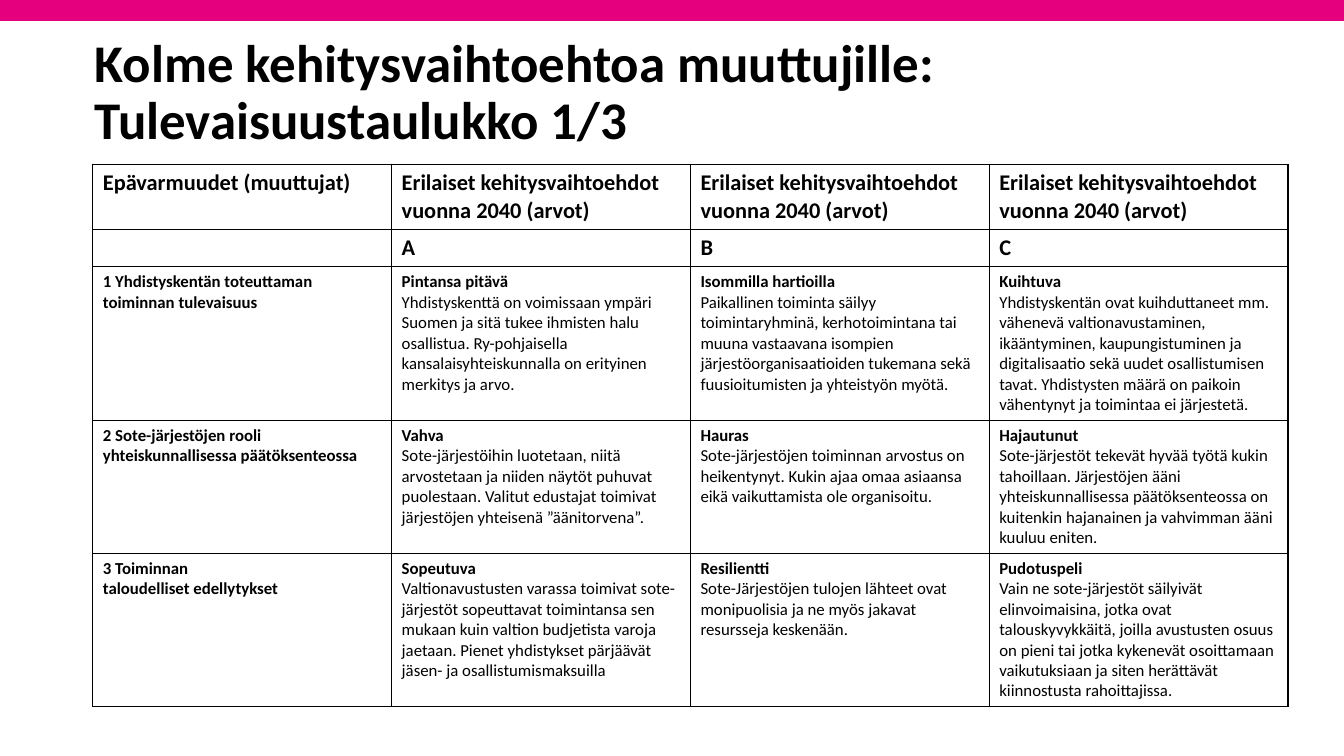
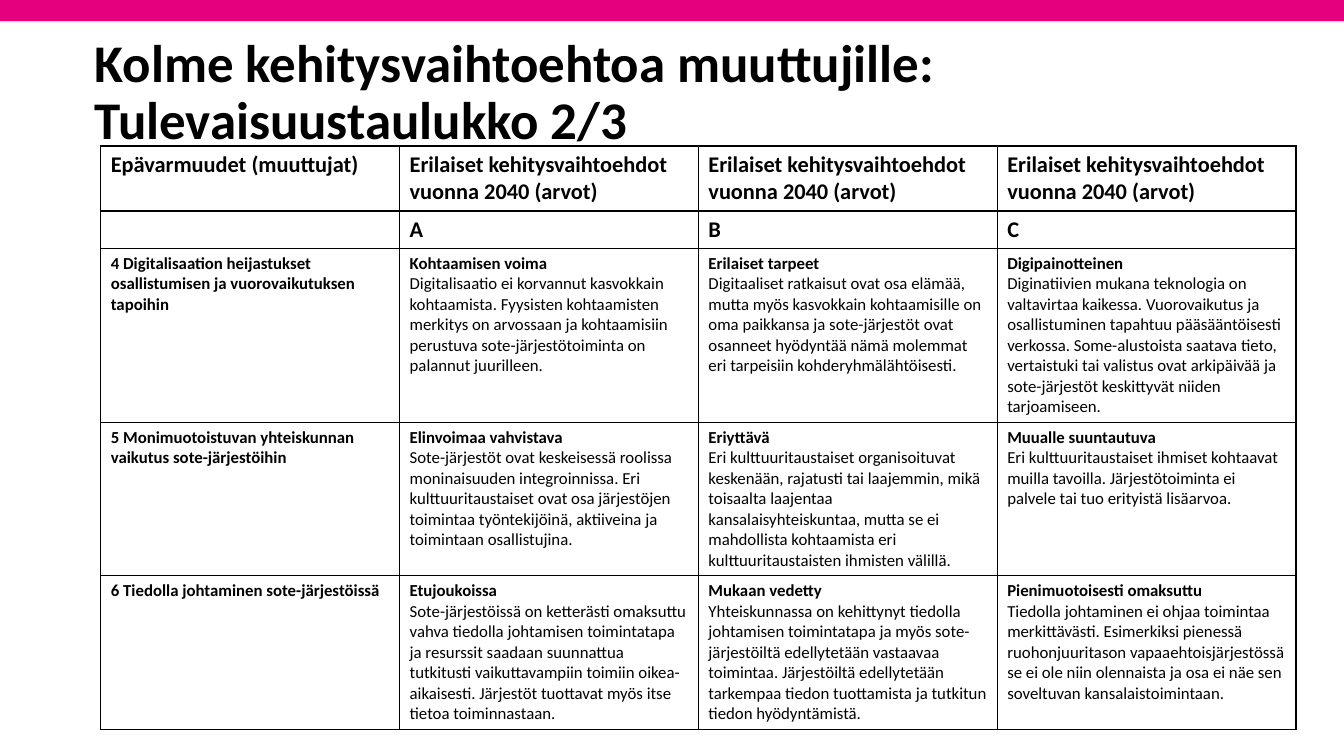
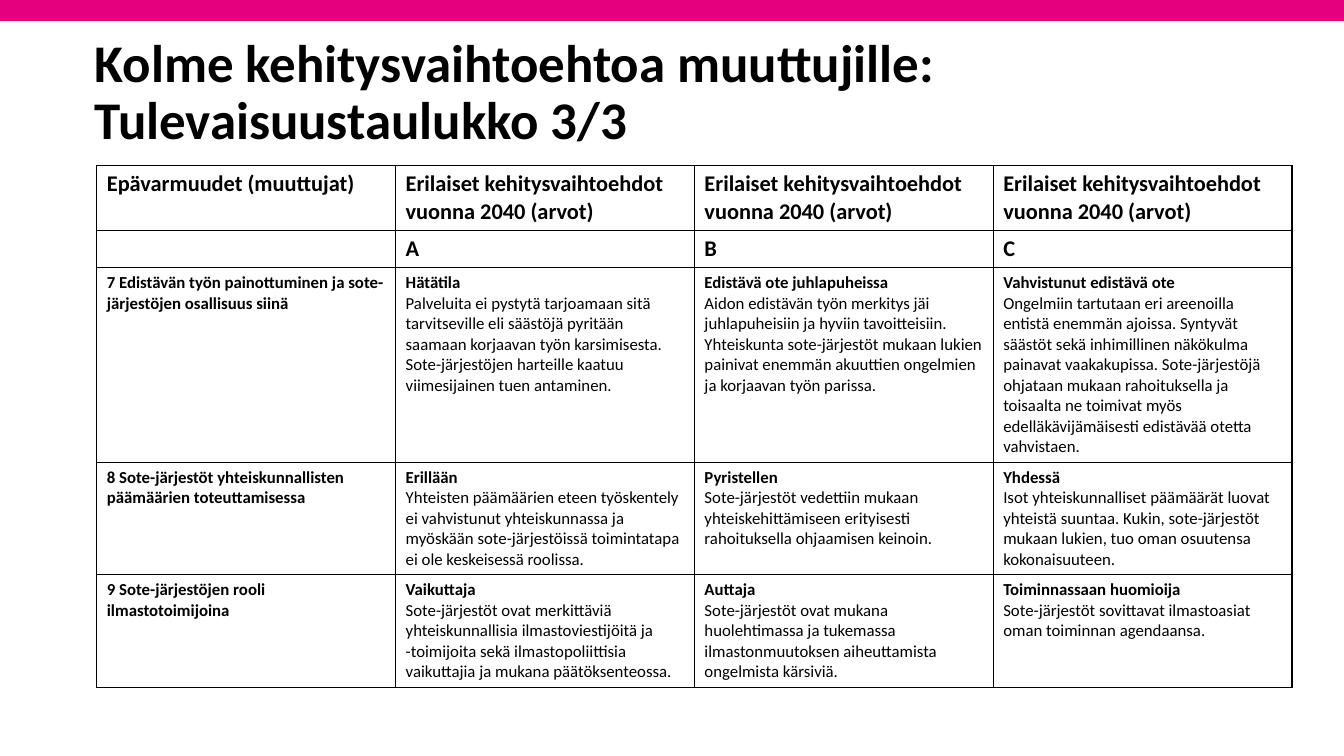
"""Builds three slides with future tables for nine uncertainties."""
from pptx import Presentation
from pptx.dml.color import RGBColor
from pptx.enum.shapes import MSO_SHAPE
from pptx.enum.text import MSO_ANCHOR, MSO_AUTO_SIZE, PP_ALIGN
from pptx.oxml import parse_xml
from pptx.oxml.ns import nsdecls
from pptx.util import Cm, Pt

PINK = RGBColor(0xE5, 0x00, 0x7D)
BLACK = RGBColor(0x00, 0x00, 0x00)
RECT = MSO_SHAPE.RECTANGLE
MIDDLE = MSO_ANCHOR.MIDDLE
LEFT = PP_ALIGN.LEFT
NO_FIT = MSO_AUTO_SIZE.NONE

FACE = "Calibri"
TITLE = {"name": FACE, "size": Pt(37.8), "bold": True}
HEAD = {"name": FACE, "size": Pt(16), "bold": True}
LABEL = {"name": FACE, "size": Pt(12), "bold": True}
BODY = {**LABEL, "bold": False}

VALUES = "Erilaiset kehitysvaihtoehdot vuonna 2040 (arvot)"
TOP_ROWS = [["Epävarmuudet (muuttujat)"] + [VALUES] * 3, ["", "A", "B", "C"]]

PAGES = [
    ((2.34, 4.14, 13.46), [
        ["1 Yhdistyskentän toteuttaman toiminnan tulevaisuus",
         ("Pintansa pitävä",
          "Yhdistyskenttä on voimissaan ympäri Suomen ja sitä tukee ihmisten halu osallistua. "
          "Ry-pohjaisella kansalaisyhteiskunnalla on erityinen merkitys ja arvo."),
         ("Isommilla hartioilla",
          "Paikallinen toiminta säilyy toimintaryhminä, kerhotoimintana tai muuna vastaavana "
          "isompien järjestöorganisaatioiden tukemana sekä fuusioitumisten ja yhteistyön myötä."),
         ("Kuihtuva",
          "Yhdistyskentän ovat kuihduttaneet mm. vähenevä valtionavustaminen, ikääntyminen, "
          "kaupungistuminen ja digitalisaatio sekä uudet osallistumisen tavat. "
          "Yhdistysten määrä on paikoin vähentynyt ja toimintaa ei järjestetä.")],
        ["2 Sote-järjestöjen rooli\nyhteiskunnallisessa päätöksenteossa",
         ("Vahva",
          "Sote-järjestöihin luotetaan, niitä arvostetaan ja niiden näytöt puhuvat puolestaan. "
          "Valitut edustajat toimivat järjestöjen yhteisenä ”äänitorvena”."),
         ("Hauras",
          "Sote-järjestöjen toiminnan arvostus on heikentynyt. "
          "Kukin ajaa omaa asiaansa eikä vaikuttamista ole organisoitu."),
         ("Hajautunut",
          "Sote-järjestöt tekevät hyvää työtä kukin tahoillaan. Järjestöjen ääni "
          "yhteiskunnallisessa päätöksenteossa on kuitenkin hajanainen ja vahvimman ääni "
          "kuuluu eniten.")],
        ["3 Toiminnan\ntaloudelliset edellytykset",
         ("Sopeutuva",
          "Valtionavustusten varassa toimivat sote-järjestöt sopeuttavat toimintansa sen mukaan "
          "kuin valtion budjetista varoja jaetaan. Pienet yhdistykset pärjäävät jäsen- ja "
          "osallistumismaksuilla"),
         ("Resilientti",
          "Sote-Järjestöjen tulojen lähteet ovat monipuolisia ja ne myös jakavat resursseja "
          "keskenään."),
         ("Pudotuspeli",
          "Vain ne sote-järjestöt säilyivät elinvoimaisina, jotka ovat talouskyvykkäitä, joilla "
          "avustusten osuus on pieni tai jotka kykenevät osoittamaan vaikutuksiaan ja siten "
          "herättävät kiinnostusta rahoittajissa.")],
    ]),
    ((2.54, 3.68, 14.48), [
        ["4 Digitalisaation heijastukset osallistumisen ja vuorovaikutuksen tapoihin",
         ("Kohtaamisen voima",
          "Digitalisaatio ei korvannut kasvokkain kohtaamista. Fyysisten kohtaamisten merkitys "
          "on arvossaan ja kohtaamisiin perustuva sote-järjestötoiminta on palannut juurilleen."),
         ("Erilaiset tarpeet",
          "Digitaaliset ratkaisut ovat osa elämää, mutta myös kasvokkain kohtaamisille on oma "
          "paikkansa ja sote-järjestöt ovat osanneet hyödyntää nämä molemmat eri tarpeisiin "
          "kohderyhmälähtöisesti."),
         ("Digipainotteinen",
          "Diginatiivien mukana teknologia on valtavirtaa kaikessa. Vuorovaikutus ja "
          "osallistuminen tapahtuu pääsääntöisesti verkossa. Some-alustoista saatava tieto, "
          "vertaistuki tai valistus ovat arkipäivää ja sote-järjestöt keskittyvät niiden "
          "tarjoamiseen.")],
        ["5 Monimuotoistuvan yhteiskunnan\nvaikutus sote-järjestöihin",
         ("Elinvoimaa vahvistava",
          "Sote-järjestöt ovat keskeisessä roolissa moninaisuuden integroinnissa. Eri "
          "kulttuuritaustaiset ovat osa järjestöjen toimintaa työntekijöinä, aktiiveina ja "
          "toimintaan osallistujina."),
         ("Eriyttävä",
          "Eri kulttuuritaustaiset organisoituvat keskenään, rajatusti tai laajemmin, mikä "
          "toisaalta laajentaa kansalaisyhteiskuntaa, mutta se ei mahdollista kohtaamista eri "
          "kulttuuritaustaisten ihmisten välillä."),
         ("Muualle suuntautuva",
          "Eri kulttuuritaustaiset ihmiset kohtaavat muilla tavoilla. Järjestötoiminta ei "
          "palvele tai tuo erityistä lisäarvoa.")],
        ["6 Tiedolla johtaminen sote-järjestöissä",
         ("Etujoukoissa",
          "Sote-järjestöissä on ketterästi omaksuttu vahva tiedolla johtamisen toimintatapa ja "
          "resurssit saadaan suunnattua tutkitusti vaikuttavampiin toimiin oikea-aikaisesti. "
          "Järjestöt tuottavat myös itse tietoa toiminnastaan."),
         ("Mukaan vedetty",
          "Yhteiskunnassa on kehittynyt tiedolla johtamisen toimintatapa ja myös "
          "sote-järjestöiltä edellytetään vastaavaa toimintaa. Järjestöiltä edellytetään "
          "tarkempaa tiedon tuottamista ja tutkitun tiedon hyödyntämistä."),
         ("Pienimuotoisesti omaksuttu",
          "Tiedolla johtaminen ei ohjaa toimintaa merkittävästi. Esimerkiksi pienessä "
          "ruohonjuuritason vapaaehtoisjärjestössä se ei ole niin olennaista ja osa ei näe sen "
          "soveltuvan kansalaistoimintaan.")],
    ]),
    ((2.44, 4.17, 12.95), [
        ["7 Edistävän työn painottuminen ja sote-järjestöjen osallisuus siinä",
         ("Hätätila",
          "Palveluita ei pystytä tarjoamaan sitä tarvitseville eli säästöjä pyritään saamaan "
          "korjaavan työn karsimisesta.\n"
          "Sote-järjestöjen harteille kaatuu viimesijainen tuen antaminen."),
         ("Edistävä ote juhlapuheissa",
          "Aidon edistävän työn merkitys jäi juhlapuheisiin ja hyviin tavoitteisiin. "
          "Yhteiskunta sote-järjestöt mukaan lukien painivat enemmän akuuttien ongelmien ja "
          "korjaavan työn parissa."),
         ("Vahvistunut edistävä ote",
          "Ongelmiin tartutaan eri areenoilla entistä enemmän ajoissa. Syntyvät säästöt sekä "
          "inhimillinen näkökulma painavat vaakakupissa. Sote-järjestöjä ohjataan mukaan "
          "rahoituksella ja toisaalta ne toimivat myös edelläkävijämäisesti edistävää otetta "
          "vahvistaen.")],
        ["8 Sote-järjestöt yhteiskunnallisten päämäärien toteuttamisessa",
         ("Erillään",
          "Yhteisten päämäärien eteen työskentely ei vahvistunut yhteiskunnassa ja myöskään "
          "sote-järjestöissä toimintatapa ei ole keskeisessä roolissa."),
         ("Pyristellen",
          "Sote-järjestöt vedettiin mukaan yhteiskehittämiseen erityisesti rahoituksella "
          "ohjaamisen keinoin."),
         ("Yhdessä",
          "Isot yhteiskunnalliset päämäärät luovat yhteistä suuntaa. Kukin, sote-järjestöt "
          "mukaan lukien, tuo oman osuutensa kokonaisuuteen.")],
        ["9 Sote-järjestöjen rooli ilmastotoimijoina",
         ("Vaikuttaja",
          "Sote-järjestöt ovat merkittäviä yhteiskunnallisia ilmastoviestijöitä ja -toimijoita "
          "sekä ilmastopoliittisia vaikuttajia ja mukana päätöksenteossa."),
         ("Auttaja",
          "Sote-järjestöt ovat mukana huolehtimassa ja tukemassa ilmastonmuutoksen "
          "aiheuttamista ongelmista kärsiviä."),
         ("Toiminnassaan huomioija",
          "Sote-järjestöt sovittavat ilmastoasiat oman toiminnan agendaansa.")],
    ]),
]


def assign(thing, values):
    """Set each named attribute of an object."""
    for name, value in values.items():
        setattr(thing, name, value)


class Deck:
    """Holds the shared style and the current slide."""

    def __init__(self):
        """Start an empty wide deck."""
        self.prs = Presentation()
        assign(self.prs, {"slide_width": Cm(33.87), "slide_height": Cm(19.05)})
        self.slide = None

    def page(self, title):
        """Add a slide with its band and title."""
        self.slide = self.prs.slides.add_slide(self.prs.slide_layouts[5])
        self.band()
        self.title(title)

    def band(self):
        """Draw the pink band along the top edge."""
        band = self.slide.shapes.add_shape(RECT, 0, Cm(-0.13), self.prs.slide_width, Cm(0.66))
        band.shadow.inherit = False
        band.fill.solid()
        band.fill.fore_color.rgb = PINK
        band.line.fill.background()

    def title(self, text):
        """Place and fill the title."""
        box = self.slide.shapes.title
        assign(box, {"left": Cm(2.13), "top": Cm(1.02), "width": Cm(29.21), "height": Cm(2.67)})
        frame = box.text_frame
        assign(frame, {"word_wrap": True, "auto_size": NO_FIT, "vertical_anchor": MIDDLE})
        para = frame.paragraphs[0]
        assign(para, {"alignment": LEFT, "line_spacing": 0.9})
        self.run(para, text, TITLE)

    def run(self, para, text, font):
        """Add black text in the given font."""
        run = para.add_run()
        run.text = text
        assign(run.font, font)
        run.font.color.rgb = BLACK

    def table(self, place, rows):
        """Add a ruled table of four equal columns."""
        left, top, height = map(Cm, place)
        rows = TOP_ROWS + rows
        frame = self.slide.shapes.add_table(len(rows), 4, left, top, Cm(30.12), height)
        table = frame.table
        assign(table, {"first_row": False, "horz_banding": False})
        for r, texts in enumerate(rows):
            table.rows[r].height = Cm(0.86 if r == 1 else 1.6)
            for c, text in enumerate(texts):
                self.cell(table.cell(r, c), text, HEAD if r < 2 else LABEL)
        frame.height = height

    def cell(self, cell, text, font):
        """Fill one cell with a label or a heading and its body."""
        head, body = (text, "") if isinstance(text, str) else text
        lines = [(line, font) for line in head.split("\n")]
        lines += [(line, BODY) for line in body.split("\n") if line]
        frame = cell.text_frame
        for i, (line, look) in enumerate(lines):
            para = frame.add_paragraph() if i else frame.paragraphs[0]
            if line:
                self.run(para, line, look)
            else:
                size = int(look["size"].pt * 100)
                para._p.append(parse_xml(f'<a:endParaRPr {nsdecls("a")} sz="{size}"/>'))
        self.rule(cell)
        cell.fill.background()

    def rule(self, cell):
        """Draw thin black lines on all four sides of a cell."""
        props = cell._tc.get_or_add_tcPr()
        for side in "LRTB":
            props.append(parse_xml(
                f'<a:ln{side} {nsdecls("a")} w="{Pt(1)}"><a:solidFill>'
                f'<a:srgbClr val="{BLACK}"/></a:solidFill></a:ln{side}>'))


def main():
    """Build and save the deck."""
    deck = Deck()
    for num, (place, rows) in enumerate(PAGES, 1):
        deck.page(f"Kolme kehitysvaihtoehtoa muuttujille: Tulevaisuustaulukko {num}/{len(PAGES)}")
        deck.table(place, rows)
    deck.prs.save("out.pptx")


if __name__ == "__main__":
    main()
